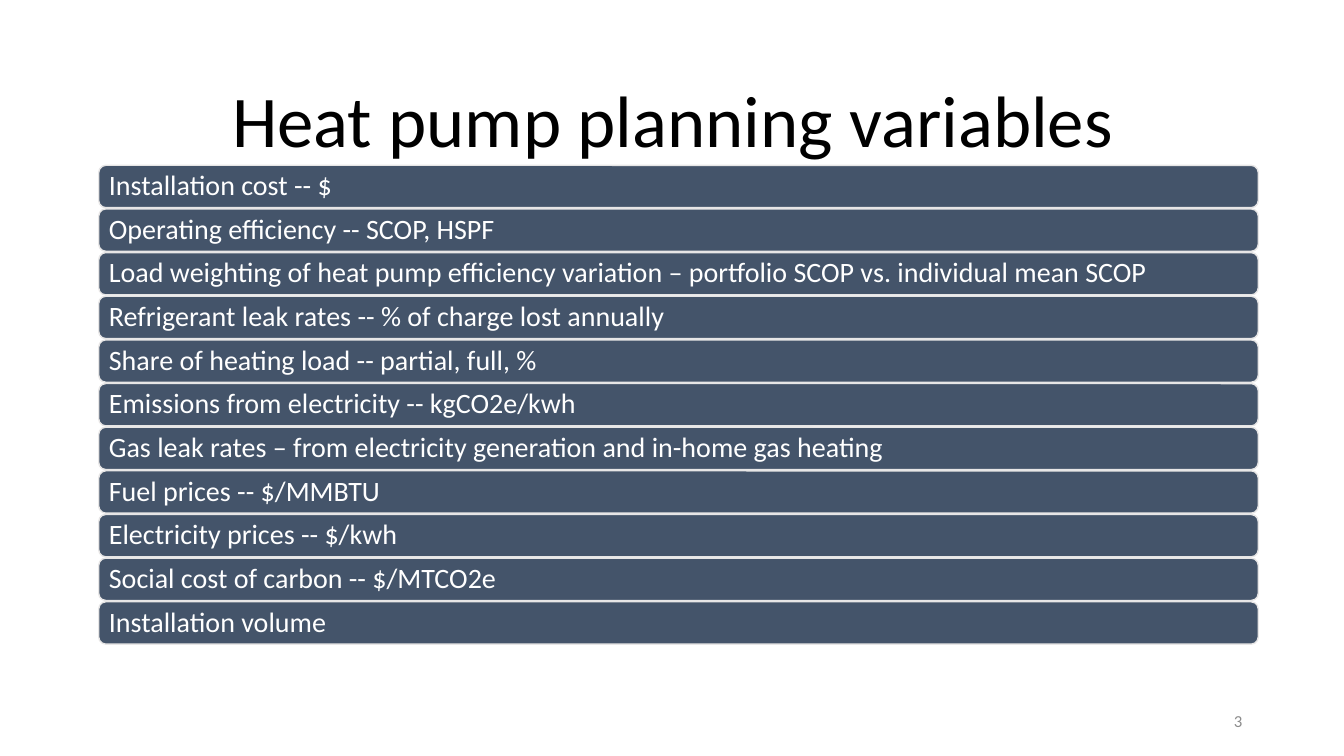
"""Build the slide listing heat pump planning variables."""
from pptx import Presentation
from pptx.dml.color import RGBColor
from pptx.enum.shapes import MSO_SHAPE
from pptx.enum.text import MSO_ANCHOR, PP_ALIGN
from pptx.util import Inches, Pt

TITLE = "Heat pump planning variables"
SLIDE_NUMBER = "3"
VARIABLES = [
    "Installation cost -- $",
    "Operating efficiency -- SCOP, HSPF",
    "Load weighting of heat pump efficiency variation – portfolio SCOP vs. individual mean SCOP",
    "Refrigerant leak rates -- % of charge lost annually",
    "Share of heating load -- partial, full, %",
    "Emissions from electricity -- kgCO2e/kwh",
    "Gas leak rates – from electricity generation and in-home gas heating",
    "Fuel prices -- $/MMBTU",
    "Electricity prices -- $/kwh",
    "Social cost of carbon -- $/MTCO2e",
    "Installation volume",
]
FONT = "Calibri"
BAR_LEFT, BAR_WIDTH, BAR_HEIGHT = 0.98, 11.5, 0.42
FIRST_TOP, LAST_TOP = 1.64, 5.97


def color(hex_string):
    return RGBColor.from_string(hex_string)


def write_text(shape, text, size, font_color, align=PP_ALIGN.LEFT,
               line_spacing=1.0, side_inset=0.1, vertical_inset=0.05):
    frame = shape.text_frame
    frame.word_wrap = True
    frame.vertical_anchor = MSO_ANCHOR.MIDDLE
    frame.margin_left = frame.margin_right = Inches(side_inset)
    frame.margin_top = frame.margin_bottom = Inches(vertical_inset)
    paragraph = frame.paragraphs[0]
    paragraph.alignment = align
    paragraph.line_spacing = line_spacing
    run = paragraph.add_run()
    run.text = text
    run.font.name = FONT
    run.font.size = Pt(size)
    run.font.color.rgb = color(font_color)


def add_bar(slide, text, top):
    bar = slide.shapes.add_shape(
        MSO_SHAPE.ROUNDED_RECTANGLE, Inches(BAR_LEFT), Inches(top),
        Inches(BAR_WIDTH), Inches(BAR_HEIGHT))
    bar.shadow.inherit = False
    bar.fill.solid()
    bar.fill.fore_color.rgb = color("44546A")
    bar.line.color.rgb = color("E7E6E6")
    bar.line.width = Pt(1)
    write_text(bar, text, 20, "FFFFFF", line_spacing=0.9,
               side_inset=0.08, vertical_inset=0)


def main():
    presentation = Presentation()
    presentation.slide_width = Inches(13.33)
    presentation.slide_height = Inches(7.5)
    slide = presentation.slides.add_slide(presentation.slide_layouts[5])

    title = slide.shapes.title
    title.left, title.top = Inches(0.92), Inches(0.61)
    title.width, title.height = Inches(11.5), Inches(1.24)
    write_text(title, TITLE, 52, "000000", align=PP_ALIGN.CENTER, line_spacing=0.9)

    number_box = slide.shapes.add_textbox(
        Inches(9.42), Inches(6.95), Inches(3), Inches(0.4))
    write_text(number_box, SLIDE_NUMBER, 12, "8C8C8C", align=PP_ALIGN.RIGHT)

    pitch = (LAST_TOP - FIRST_TOP) / (len(VARIABLES) - 1)
    for index, variable in enumerate(VARIABLES):
        add_bar(slide, variable, FIRST_TOP + index * pitch)

    presentation.save("out.pptx")


if __name__ == "__main__":
    main()
